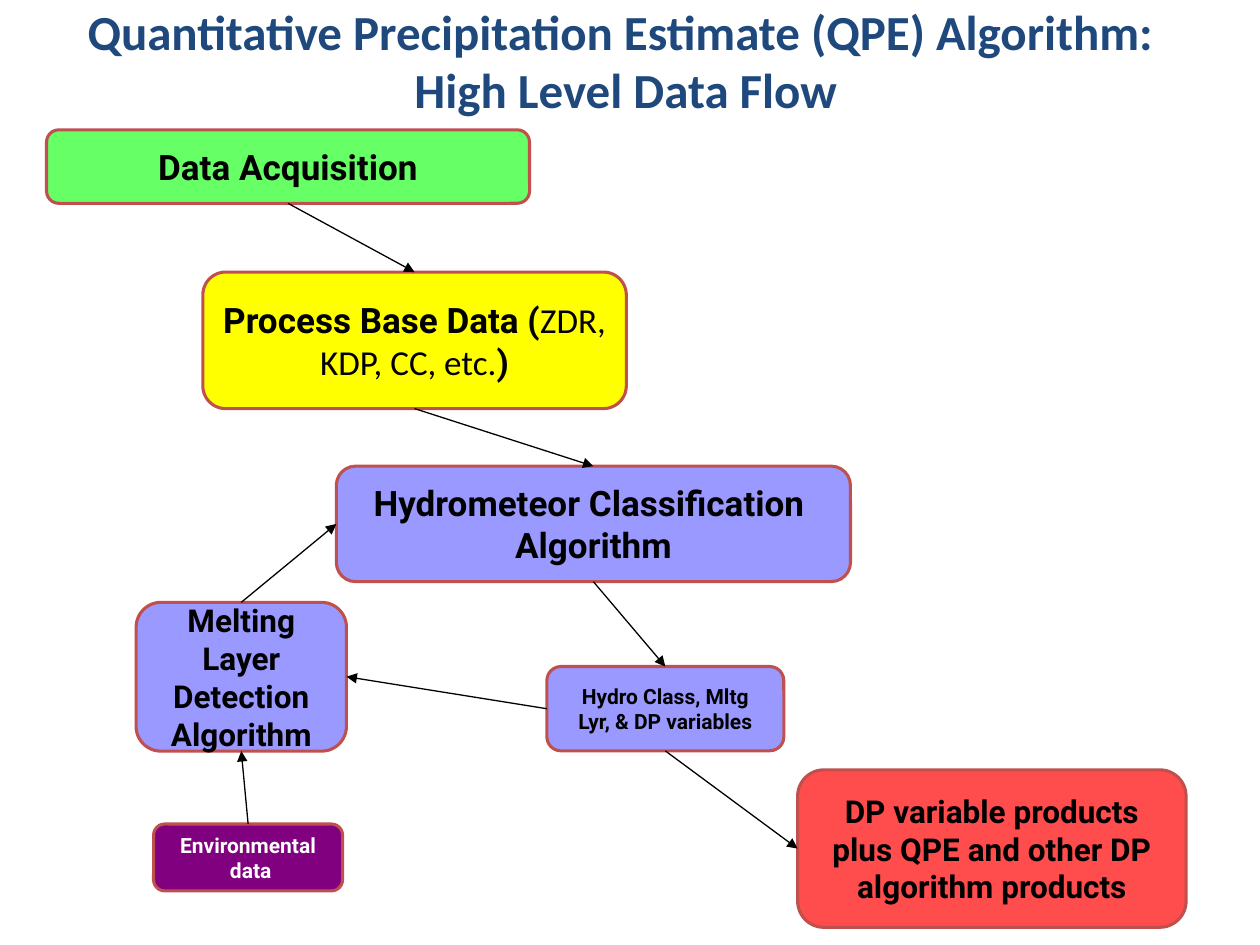
from dataclasses import dataclass

from lxml import etree
from pptx import Presentation
from pptx.dml.color import RGBColor
from pptx.enum import shapes, text
from pptx.oxml import ns
from pptx.util import Pt

TOP, LEFT, BOTTOM, RIGHT = range(4)
BLACK, WHITE, BORDER, NAVY = "000000", "FFFFFF", "C0504D", "1F497D"


@dataclass
class Box:
    name: str
    x: float
    y: float
    w: float
    h: float
    label: str
    fill: str
    size: float
    alpha: int = 100
    color: str = BLACK
    light: str = ""
    closing: str = ""


@dataclass
class Flow:
    start: str
    start_side: int
    end: str
    end_side: int


BOXES = [
    Box("variables", 312.5, 380.9, 135.4, 48.2,
        "Hydro Class, Mltg Lyr, & DP variables", "0000FF", 12, 40),
    Box("hydrometeor", 192.2, 266.4, 293.8, 66,
        "Hydrometeor Classification \nAlgorithm", "0000FF", 20, 40),
    Box("products", 455.8, 439.9, 222, 90,
        "DP variable products plus QPE and other DP algorithm products", "FF0000", 18, 70),
    Box("melting", 77.8, 344.2, 120.2, 85,
        "Melting\nLayer\nDetection\nAlgorithm", "0000FF", 18, 40),
    Box("acquisition", 26.6, 74.2, 276, 42, "Data Acquisition", "66FF66", 20),
    Box("base", 115.9, 155.5, 242, 78, "Process Base Data (", "FFFF00", 20,
        light="ZDR, KDP, CC, etc.", closing=")"),
    Box("environment", 87.8, 470.9, 108, 38.2,
        "Environmental\n data", "800080", 12, color=WHITE),
]

FLOWS = [
    Flow("acquisition", BOTTOM, "base", TOP),
    Flow("base", BOTTOM, "hydrometeor", TOP),
    Flow("hydrometeor", BOTTOM, "variables", TOP),
    Flow("variables", LEFT, "melting", RIGHT),
    Flow("variables", BOTTOM, "products", LEFT),
    Flow("melting", TOP, "hydrometeor", LEFT),
    Flow("environment", TOP, "melting", BOTTOM),
]


def rgb(value: str) -> RGBColor:
    return RGBColor.from_string(value)


def write(p, content: str, *, size: float, font: str = "Roboto",
          color: str = BLACK, bold: bool = True) -> None:
    p.alignment = text.PP_ALIGN.CENTER
    for i, line in enumerate(content.split("\n")):
        if i:
            p.add_line_break()
        r = p.add_run()
        r.text = line
        r.font.size, r.font.name, r.font.bold = Pt(size), font, bold
        r.font.color.rgb = rgb(color)


def add_title(s) -> None:
    title = s.shapes.title
    title.left, title.top, title.width, title.height = Pt(17.3), Pt(13), Pt(680.4), Pt(42.5)
    tf = title.text_frame
    tf.auto_size = text.MSO_AUTO_SIZE.NONE
    tf.vertical_anchor = text.MSO_ANCHOR.MIDDLE
    style = dict(size=28, font="Calibri", color=NAVY)
    write(tf.paragraphs[0], "Quantitative Precipitation Estimate (QPE) Algorithm: ", **style)
    write(tf.add_paragraph(), "High Level Data Flow", **style)


def add_box(s, box: Box):
    sp = s.shapes.add_shape(shapes.MSO_SHAPE.ROUNDED_RECTANGLE,
                            Pt(box.x), Pt(box.y), Pt(box.w), Pt(box.h))
    sp.shadow.inherit = False
    sp.fill.solid()
    sp.fill.fore_color.rgb = rgb(box.fill)
    if box.alpha < 100:
        color = sp.fill._xPr.find(ns.qn("a:solidFill"))[0]
        etree.SubElement(color, ns.qn("a:alpha"), val=str(box.alpha * 1000))
    sp.line.color.rgb = rgb(BORDER)
    sp.line.width = Pt(1.75)
    tf = sp.text_frame
    tf.word_wrap = True
    tf.vertical_anchor = text.MSO_ANCHOR.MIDDLE
    p = tf.paragraphs[0]
    write(p, box.label, size=box.size, color=box.color)
    if box.light:
        write(p, box.light, size=box.size, font="Calibri", bold=False)
        write(p, box.closing, size=box.size)
    return sp


def add_flow(s, flow: Flow, drawn: dict) -> None:
    c = s.shapes.add_connector(shapes.MSO_CONNECTOR.STRAIGHT, 0, 0, 0, 0)
    c.begin_connect(drawn[flow.start], flow.start_side)
    c.end_connect(drawn[flow.end], flow.end_side)
    c.line.color.rgb = rgb(BLACK)
    c.line.width = Pt(0.75)
    etree.SubElement(c.line._get_or_add_ln(), ns.qn("a:tailEnd"), type="triangle")
    etree.SubElement(c._element.spPr, ns.qn("a:effectLst"))


def main() -> None:
    prs = Presentation()
    prs.slide_width, prs.slide_height = Pt(720), Pt(540)
    s = prs.slides.add_slide(prs.slide_layouts[5])
    add_title(s)
    drawn = {box.name: add_box(s, box) for box in BOXES}
    for flow in FLOWS:
        add_flow(s, flow, drawn)
    prs.save("out.pptx")


if __name__ == "__main__":
    main()
